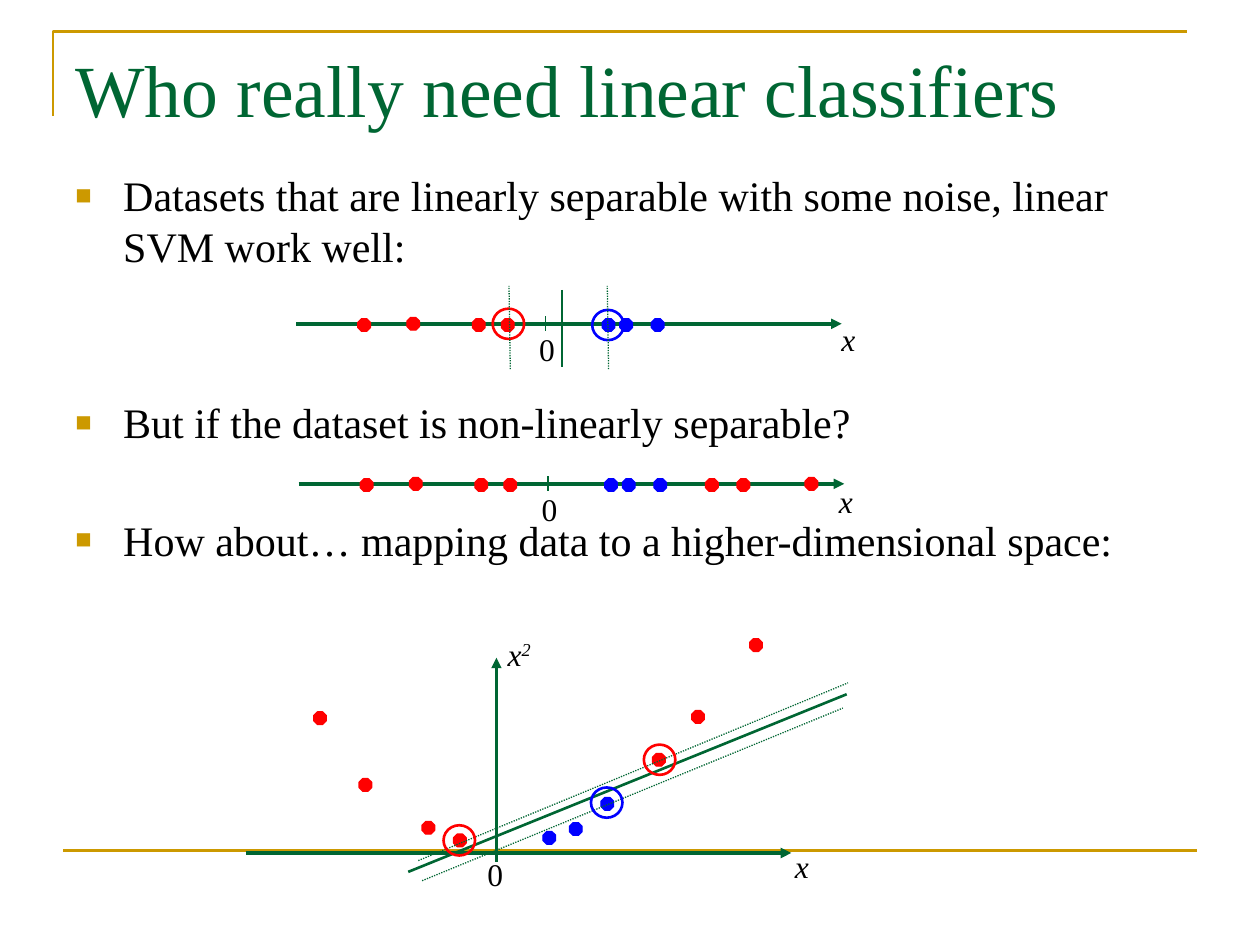
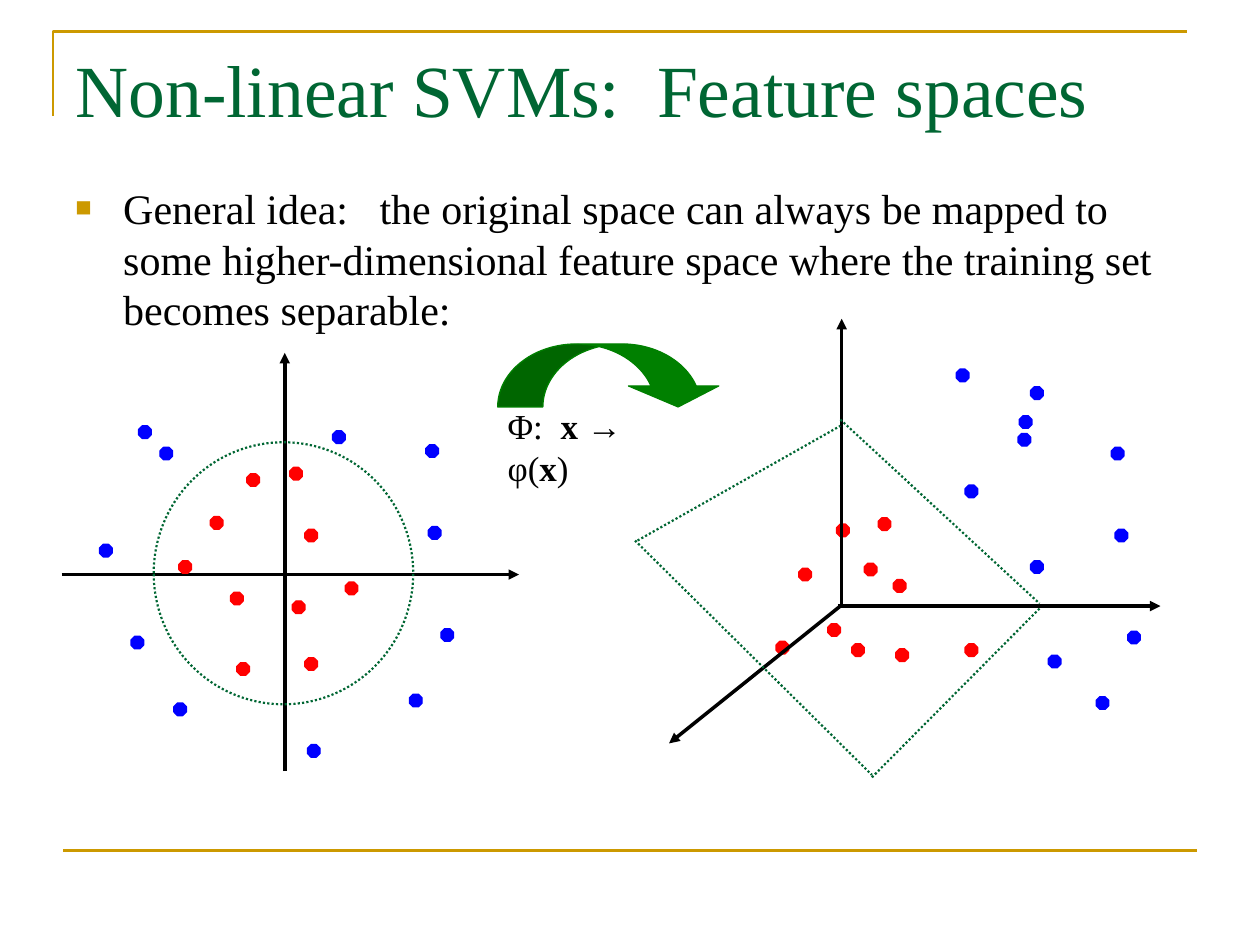
from dataclasses import dataclass

from lxml import etree
from pptx import Presentation
from pptx import util as u
from pptx.dml.color import RGBColor
from pptx.enum import dml, shapes, text
from pptx.oxml.ns import qn


# Theme
@dataclass(frozen=True)
class Theme:
    font: str = "Times New Roman"
    green: str = "006633"
    gold: str = "CC9900"
    arrow: str = "008000"
    black: str = "000000"
    red: str = "FF0000"
    blue: str = "0000FF"
    title: int = 42
    body: int = 24
    formula: int = 20
    label: int = 18
    leading: float = 1.2
    hairline: float = 0.75
    dotted: float = 1.25
    medium: float = 1.5
    thick: float = 2


THEME = Theme()
WIDTH, HEIGHT = 10, 7.5
DOT = 0.1
RING = (0.25, 0.24)

# Content: bullets are (text, empty lines left above it)
NOISE_TITLE = "Who really need linear classifiers"
NOISE_BULLETS = [
    ("Datasets that are linearly separable with some noise, linear SVM work well:", 0),
    ("But if the dataset is non-linearly separable?", 2),
    ("How about… mapping data to a higher-dimensional space:", 1),
]
FEATURE_TITLE = "Non-linear SVMs:  Feature spaces"
FEATURE_BULLETS = [
    ("General idea:   the original space can always be mapped to some "
     "higher-dimensional feature space where the training set becomes separable:", 0),
]
# Label runs: (text, style), style letters i italic, b bold, s superscript
ZERO = [("0", "")]
X = [("x", "i")]
X_SQUARED = [("x", "i"), ("2", "is")]
MAPPING = [("Φ:  ", ""), ("x → ", "b"), ("φ(", ""), ("x", "b"), (")", "")]

# Number lines: dots as (right of, below) the left end of the axis
AXIS_LENGTH, ZERO_AT = 4.33, 1.98
LEFT_REDS = [(0.49, -0.04), (0.88, -0.05), (1.4, -0.04), (1.63, -0.04)]
MIDDLE_BLUES = [(2.43, -0.04), (2.57, -0.04), (2.82, -0.04)]
RIGHT_REDS = [(3.23, -0.04), (3.48, -0.04), (4.02, -0.05)]
NUMBER_LINES = [
    # left end, red dots, label of the axis
    ((2.35, 2.57), LEFT_REDS, (4.23, -0.08)),
    ((2.37, 3.84), LEFT_REDS + RIGHT_REDS, (4.19, -0.06)),
]
MARGIN_RINGS = [((3.91, 2.45), THEME.red), ((4.7, 2.46), THEME.blue)]
MARGIN_LINES = [((4.05, 2.93), (4.04, 2.27)), ((4.83, 2.93), (4.82, 2.27))]

# Parabola chart
PARABOLA_AXES = [((1.95, 6.77), (6.28, 6.77)), ((3.94, 6.84), (3.94, 5.22))]
PARABOLA_REDS = [(2.49, 5.65), (2.85, 6.18), (3.35, 6.52), (3.6, 6.62),
                 (5.18, 5.98), (5.49, 5.64), (5.95, 5.07)]
PARABOLA_BLUES = [(4.31, 6.6), (4.52, 6.53), (4.77, 6.33)]
PARABOLA_SEPARATOR = ((3.24, 6.92), (6.72, 5.51))
PARABOLA_MARGINS = [((3.32, 6.83), (6.73, 5.42)), ((3.35, 6.99), (6.69, 5.62))]
PARABOLA_RINGS = [((5.11, 5.91), THEME.red), ((4.69, 6.25), THEME.blue),
                  ((3.52, 6.55), THEME.red)]
PARABOLA_LABELS = [(ZERO, 3.77, 6.74), (X_SQUARED, 3.93, 4.99), (X, 6.21, 6.67)]

# Input space and feature space
INPUT_AXES = [((2.26, 6.12), (2.26, 2.8)), ((0.49, 4.56), (4.12, 4.56))]
INPUT_REDS = [(2.3, 3.71), (1.67, 4.1), (1.83, 4.7), (2.42, 5.22), (1.96, 3.76),
              (1.42, 4.45), (1.88, 5.26), (2.42, 4.2), (2.74, 4.62), (2.32, 4.77)]
INPUT_BLUES = [(3.4, 4.18), (3.25, 5.51), (0.79, 4.32), (2.44, 5.91), (3.5, 4.99),
               (1.38, 5.58), (1.04, 5.05), (1.1, 3.38), (2.64, 3.42), (1.27, 3.55),
               (3.38, 3.53)]
INPUT_BOUNDARY = ((1.22, 3.51), (2.06, 2.08))
FEATURE_AXES = [((6.68, 4.79), (6.68, 2.53)), ((6.65, 4.81), (9.21, 4.81)),
                ((6.67, 4.81), (5.31, 5.9))]
FEATURE_REDS = [(6.97, 4.11), (6.34, 4.51), (6.76, 5.11), (7.66, 5.11), (6.64, 4.16),
                (6.86, 4.47), (7.11, 5.15), (7.09, 4.6), (6.57, 4.95), (6.16, 5.09)]
FEATURE_BLUES = [(8.85, 4.2), (8.7, 5.53), (8.18, 3.07), (8.18, 4.45), (8.95, 5.01),
                 (7.66, 3.85), (8.32, 5.2), (8.09, 3.3), (8.08, 3.44), (7.59, 2.93),
                 (8.82, 3.55)]
PLANE_EDGES = [((6.67, 3.33), (8.25, 4.79)), ((6.92, 6.17), (8.25, 4.83)),
               ((5.06, 4.29), (6.67, 3.38)), ((5.04, 4.29), (6.92, 6.15))]
MAPPING_ARROW = ((3.95, 2.73), (1.79, 0.5))


# Drawing helpers
def inches(*lengths):
    return [u.Inches(length) for length in lengths]


def color(value):
    return RGBColor.from_string(value)


def style_line(line, value, width, dotted=False):
    line.color.rgb = color(value)
    line.width = u.Pt(width)
    if dotted:
        line.dash_style = dml.MSO_LINE.ROUND_DOT


def add_line(slide, ends, value, width, dotted=False, arrow=False):
    start, end = ends
    connector = slide.shapes.add_connector(
        shapes.MSO_CONNECTOR.STRAIGHT, *inches(*start, *end))
    style_line(connector.line, value, width, dotted)
    if arrow:
        etree.SubElement(connector.line._get_or_add_ln(), qn("a:tailEnd"), type="triangle")
    etree.SubElement(connector._element.spPr, qn("a:effectLst"))


def add_figure(slide, kind, corner, size, value, width, filled=False, dotted=False):
    shape = slide.shapes.add_shape(kind, *inches(*corner, *size))
    shape.shadow.inherit = False
    if filled:
        shape.fill.solid()
        shape.fill.fore_color.rgb = color(value)
    else:
        shape.fill.background()
    style_line(shape.line, value, width, dotted)
    return shape


def add_dots(slide, corners, value):
    for corner in corners:
        add_figure(slide, shapes.MSO_SHAPE.OCTAGON, corner, (DOT, DOT), value,
                   THEME.hairline, filled=True)


def add_rings(slide, rings):
    for corner, value in rings:
        add_figure(slide, shapes.MSO_SHAPE.OVAL, corner, RING, value, THEME.medium)


def add_axes(slide, axes, value):
    for ends in axes:
        add_line(slide, ends, value, THEME.thick, arrow=True)


def add_dotted(slide, lines, width):
    for ends in lines:
        add_line(slide, ends, THEME.green, width, dotted=True)


# Text helpers
def set_frame(shape):
    frame = shape.text_frame
    frame.word_wrap = True
    frame.auto_size = text.MSO_AUTO_SIZE.NONE
    frame.vertical_anchor = text.MSO_ANCHOR.TOP
    return frame


def add_runs(paragraph, runs, size, value=THEME.black):
    paragraph.alignment = text.PP_ALIGN.LEFT
    paragraph.line_spacing = u.Pt(round(size * THEME.leading, 1))
    for words, style in runs:
        run = paragraph.add_run()
        run.text = words
        run.font.name = THEME.font
        run.font.size = u.Pt(size)
        run.font.color.rgb = color(value)
        run.font.bold = "b" in style
        run.font.italic = "i" in style
        if "s" in style:
            run.font._element.set("baseline", "30000")


def add_label(slide, runs, left, top, width=0.5, height=0.4, size=THEME.label):
    box = slide.shapes.add_textbox(*inches(left, top, width, height))
    add_runs(set_frame(box).paragraphs[0], runs, size)


def set_bullet(paragraph):
    properties = paragraph._p.get_or_add_pPr()
    indent = u.Inches(0.38)
    properties.set("marL", str(indent))
    properties.set("indent", str(-indent))
    bullet_color = etree.SubElement(properties, qn("a:buClr"))
    etree.SubElement(bullet_color, qn("a:srgbClr"), val=THEME.gold)
    etree.SubElement(properties, qn("a:buSzPct"), val="65000")
    etree.SubElement(properties, qn("a:buFont"), typeface=THEME.font)
    etree.SubElement(properties, qn("a:buChar"), char="■")


def add_bullets(slide, bullets, top, height):
    box = slide.shapes.add_textbox(*inches(WIDTH * 0.05, top, WIDTH * 0.9, height))
    frame = set_frame(box)
    gap = 0.2 * THEME.body
    for index, (words, empty_lines) in enumerate(bullets):
        paragraph = frame.add_paragraph() if index else frame.paragraphs[0]
        add_runs(paragraph, [(words, "")], THEME.body)
        if index:
            step = THEME.body * THEME.leading + gap
            paragraph.space_before = u.Pt(round(gap + empty_lines * step, 1))
        set_bullet(paragraph)


# Shared slide frame: corner, bottom rule and title
def start_slide(presentation, title):
    slide = presentation.slides.add_slide(presentation.slide_layouts[5])
    left, top, right, bottom = 0.42, 0.25, 9.42, 0.92
    builder = slide.shapes.build_freeform(*inches(left, bottom), scale=1.0)
    builder.add_line_segments([inches(left, top), inches(right, top)], close=False)
    corner = builder.convert_to_shape()
    corner.shadow.inherit = False
    corner.fill.background()
    style_line(corner.line, THEME.gold, THEME.medium)
    rule = HEIGHT * 0.9
    add_line(slide, ((WIDTH * 0.05, rule), (WIDTH * 0.95, rule)), THEME.gold, THEME.medium)

    holder = slide.shapes.title
    holder.left, holder.top, holder.width, holder.height = inches(
        WIDTH * 0.05, 0.3, WIDTH * 0.9, 1.25)
    add_runs(set_frame(holder).paragraphs[0], [(title, "")], THEME.title, THEME.green)
    return slide


def add_number_line(slide, origin, reds, label):
    left, level = origin

    def place(offsets):
        return [(left + right, level + down) for right, down in offsets]

    add_axes(slide, [(origin, (left + AXIS_LENGTH, level))], THEME.green)
    add_line(slide, place([(ZERO_AT, -0.06), (ZERO_AT, 0.06)]), THEME.green, THEME.hairline)
    add_dots(slide, place(reds), THEME.red)
    add_dots(slide, place(MIDDLE_BLUES), THEME.blue)
    add_label(slide, ZERO, left + ZERO_AT - 0.15, level)
    add_label(slide, X, *place([label])[0])


def build_classifier_slide(presentation):
    slide = start_slide(presentation, NOISE_TITLE)
    add_bullets(slide, NOISE_BULLETS, 1.3, 5.4)

    # Number lines
    for number_line in NUMBER_LINES:
        add_number_line(slide, *number_line)
    add_line(slide, ((4.46, 2.3), (4.46, 2.91)), THEME.green, THEME.medium)
    add_rings(slide, MARGIN_RINGS)
    add_dotted(slide, MARGIN_LINES, THEME.hairline)

    # Parabola
    add_axes(slide, PARABOLA_AXES, THEME.green)
    add_line(slide, ((3.93, 6.71), (3.93, 6.83)), THEME.green, THEME.hairline)
    add_dots(slide, PARABOLA_REDS, THEME.red)
    add_dots(slide, PARABOLA_BLUES, THEME.blue)
    for label in PARABOLA_LABELS:
        add_label(slide, *label)
    add_line(slide, PARABOLA_SEPARATOR, THEME.green, THEME.medium)
    add_dotted(slide, PARABOLA_MARGINS, THEME.hairline)
    add_rings(slide, PARABOLA_RINGS)


def build_feature_slide(presentation):
    slide = start_slide(presentation, FEATURE_TITLE)
    add_bullets(slide, FEATURE_BULLETS, 1.4, 5.31)

    # Input space
    add_axes(slide, INPUT_AXES, THEME.black)
    add_dots(slide, INPUT_REDS, THEME.red)
    add_dots(slide, INPUT_BLUES, THEME.blue)
    add_figure(slide, shapes.MSO_SHAPE.OVAL, *INPUT_BOUNDARY, THEME.green,
               THEME.dotted, dotted=True)

    # Feature space
    add_dots(slide, FEATURE_REDS, THEME.red)
    add_dots(slide, FEATURE_BLUES, THEME.blue)
    add_axes(slide, FEATURE_AXES, THEME.black)
    add_dotted(slide, PLANE_EDGES, THEME.dotted)

    # Mapping between them
    arrow = add_figure(slide, shapes.MSO_SHAPE.CURVED_DOWN_ARROW, *MAPPING_ARROW,
                       THEME.arrow, THEME.hairline, filled=True)
    for index, share in enumerate((0.717, 1.433, 0.333)):
        arrow.adjustments[index] = share
    add_label(slide, MAPPING, 3.93, 3.16, 1.65, 0.43, THEME.formula)


def main():
    presentation = Presentation()
    presentation.slide_width, presentation.slide_height = inches(WIDTH, HEIGHT)
    build_classifier_slide(presentation)
    build_feature_slide(presentation)
    presentation.save("out.pptx")


if __name__ == "__main__":
    main()
